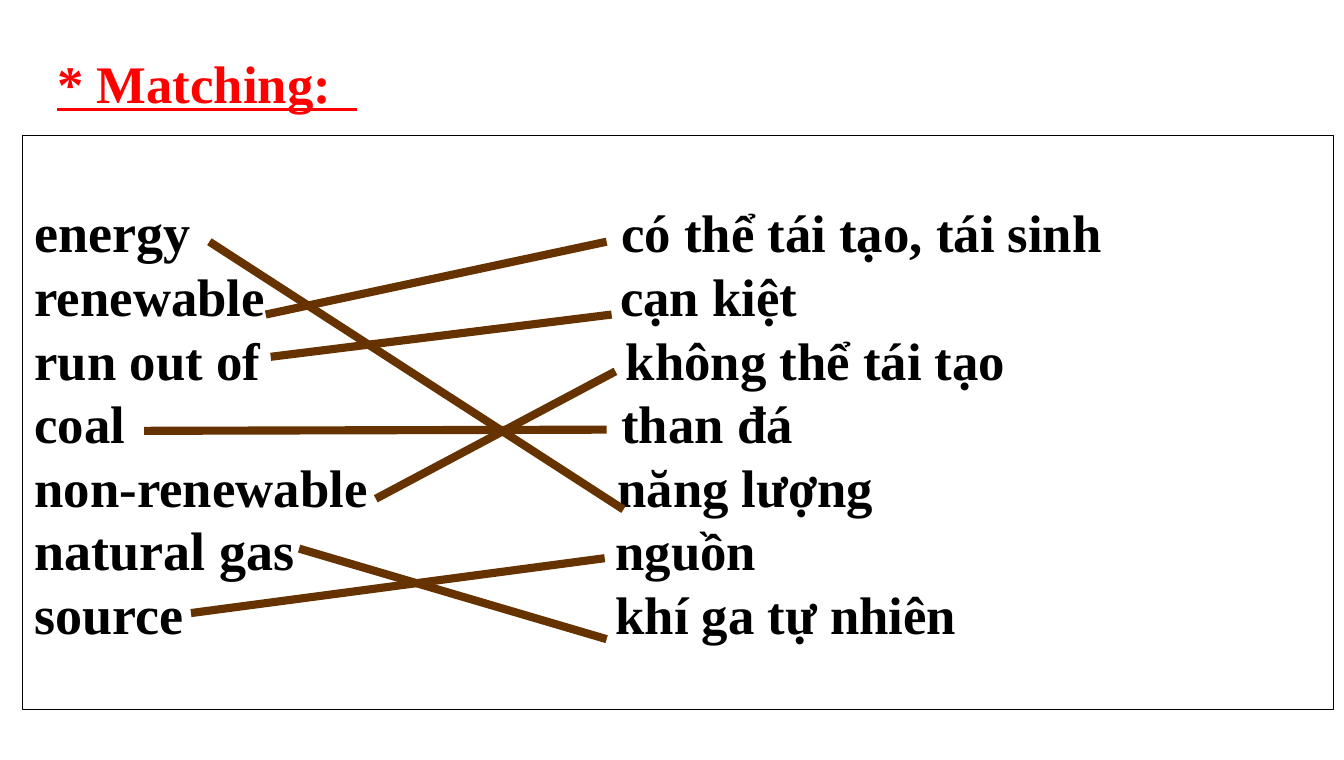
from dataclasses import dataclass

from lxml import etree
from pptx import Presentation
from pptx.dml.color import RGBColor
from pptx.enum.shapes import MSO_CONNECTOR
from pptx.enum.text import MSO_ANCHOR, MSO_AUTO_SIZE, PP_ALIGN
from pptx.oxml.ns import qn
from pptx.shapes.placeholder import SlidePlaceholder
from pptx.slide import Slide
from pptx.text.text import _Paragraph
from pptx.util import Cm, Pt

STRAIGHT = MSO_CONNECTOR.STRAIGHT
TOP, MIDDLE = MSO_ANCHOR.TOP, MSO_ANCHOR.MIDDLE
LEFT = PP_ALIGN.LEFT
NO_AUTOFIT = MSO_AUTO_SIZE.NONE

FONT = "Times New Roman"
COLORS = {"heading": "FF0000", "word": "000000", "frame": "000000", "match": "663300"}


@dataclass(frozen=True)
class Word:
    text: str
    indent: float = 0
    size: int = 39


@dataclass(frozen=True)
class Match:
    start: tuple[float, float]
    end: tuple[float, float]


TERMS = [
    Word("energy", size=40),
    Word("renewable"),
    Word("run out of"),
    Word("coal"),
    Word("non-renewable"),
    Word("natural gas", size=40),
    Word("source", size=40),
]

MEANINGS = [
    Word("có thể tái tạo, tái sinh", 0.15),
    Word("cạn kiệt", 0.12),
    Word("không thể tái tạo", 0.27),
    Word("than đá", 0.15),
    Word("năng lượng", 0.05),
    Word("nguồn"),
    Word("khí ga tự nhiên"),
]

MATCHES = [
    Match((5.46, 6.3), (16.26, 13.28)),
    Match((6.93, 8.2), (15.82, 6.3)),
    Match((7.06, 9.3), (15.95, 8.2)),
    Match((3.76, 11.23), (15.82, 11.2)),
    Match((9.8, 13), (16.05, 9.68)),
    Match((7.8, 14.3), (15.82, 16.66)),
    Match((4.98, 15.98), (15.77, 14.55)),
]


def write(paragraph: _Paragraph, text: str, *, size: int, color: str,
          underline: bool = False) -> None:
    run = paragraph.add_run()
    run.text = text
    run.font.name = FONT
    run.font.size = Pt(size)
    run.font.bold = True
    run.font.underline = underline
    run.font.color.rgb = RGBColor.from_string(COLORS[color])


def place(holder: SlidePlaceholder, left: float, top: float, width: float,
          height: float, anchor: MSO_ANCHOR) -> None:
    holder.left, holder.top = Cm(left), Cm(top)
    holder.width, holder.height = Cm(width), Cm(height)
    frame = holder.text_frame
    frame.word_wrap = True
    frame.auto_size = NO_AUTOFIT
    frame.vertical_anchor = anchor
    frame.margin_left = frame.margin_right = Cm(0.32)
    frame.margin_top = frame.margin_bottom = Cm(0.15)


def format_row(paragraph: _Paragraph, indent: float) -> None:
    paragraph.alignment = LEFT
    paragraph.line_spacing = Pt(47)
    paragraph.space_before = Pt(0)
    properties = paragraph._p.get_or_add_pPr()
    properties.set("marL", str(Cm(indent)))
    properties.set("indent", "0")
    etree.SubElement(properties, qn("a:buNone"))


def draw_heading(slide: Slide) -> None:
    heading = slide.shapes.title
    place(heading, 1.17, 1.17, 31.55, 1.98, TOP)
    paragraph = heading.text_frame.paragraphs[0]
    paragraph.alignment = LEFT
    write(paragraph, "* Matching:  ", size=39, color="heading", underline=True)


def draw_column(column: SlidePlaceholder, words: list[Word], left: float,
                width: float) -> None:
    place(column, left, 3.53, width, 14.96, MIDDLE)
    frame = column.text_frame
    for index, word in enumerate(words):
        paragraph = frame.add_paragraph() if index else frame.paragraphs[0]
        format_row(paragraph, word.indent)
        write(paragraph, word.text, size=word.size, color="word")


def draw_words(slide: Slide) -> None:
    terms, meanings = slide.placeholders[1], slide.placeholders[2]
    draw_column(terms, TERMS, 0.58, 34.19)
    terms.line.color.rgb = RGBColor.from_string(COLORS["frame"])
    terms.line.width = Pt(0.25)
    draw_column(meanings, MEANINGS, 15.73, 19.04)


def draw_match(slide: Slide, match: Match) -> None:
    ends = [Cm(length) for length in (*match.start, *match.end)]
    connector = slide.shapes.add_connector(STRAIGHT, *ends)
    connector.line.color.rgb = RGBColor.from_string(COLORS["match"])
    connector.line.width = Pt(6)
    etree.SubElement(connector._element.spPr, qn("a:effectLst"))


def main() -> None:
    presentation = Presentation()
    presentation.slide_width, presentation.slide_height = Cm(35.05), Cm(19.81)
    slide = presentation.slides.add_slide(presentation.slide_layouts[3])
    draw_heading(slide)
    draw_words(slide)
    for match in MATCHES:
        draw_match(slide, match)
    presentation.save("out.pptx")


if __name__ == "__main__":
    main()
